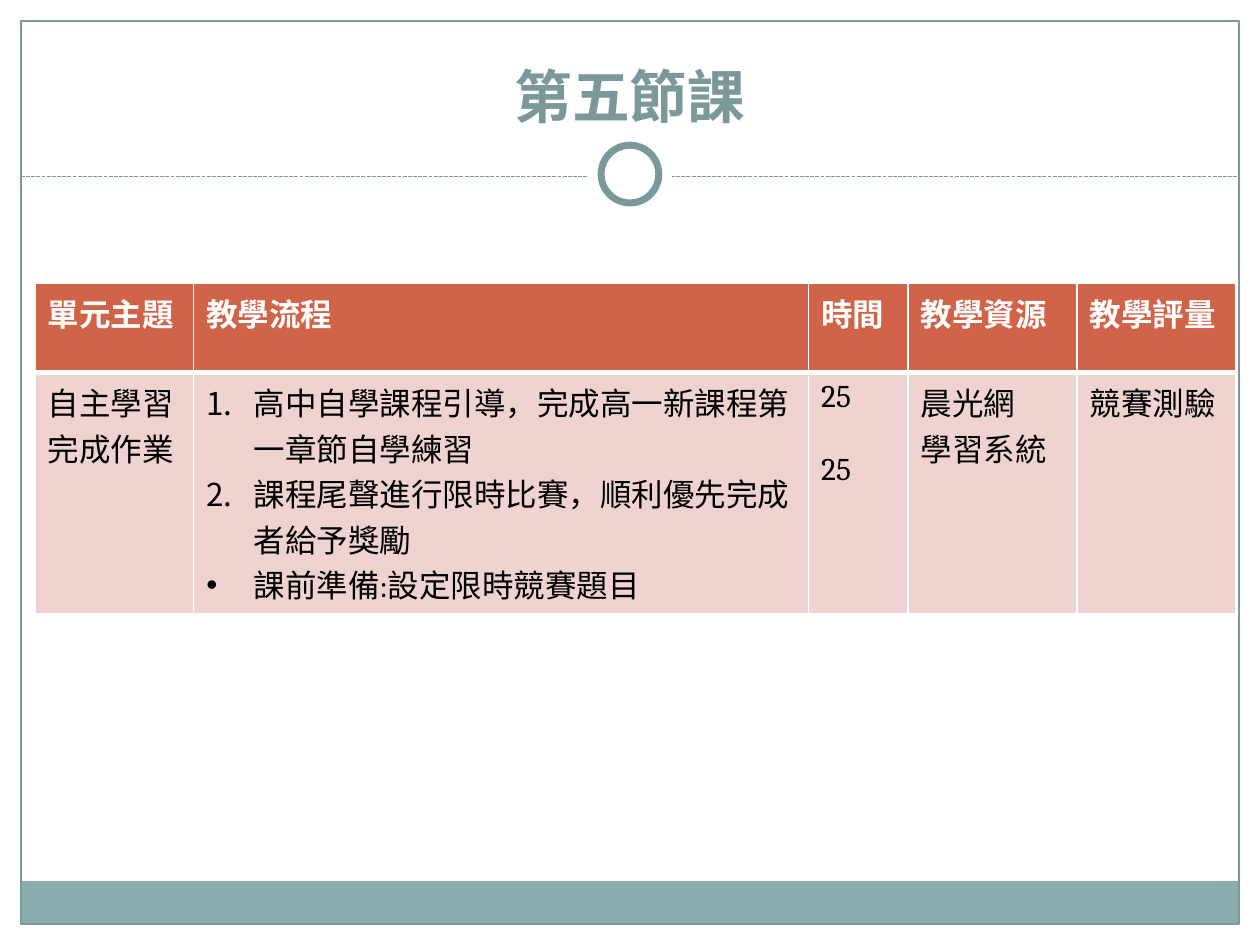
from lxml import etree
from pptx import Presentation
from pptx.dml.color import RGBColor
from pptx.enum.dml import MSO_LINE
from pptx.enum.shapes import MSO_CONNECTOR, MSO_SHAPE
from pptx.enum.text import MSO_ANCHOR, MSO_AUTO_SIZE, PP_ALIGN
from pptx.oxml.ns import qn
from pptx.util import Pt

RECTANGLE, OVAL = MSO_SHAPE.RECTANGLE, MSO_SHAPE.OVAL
STRAIGHT = MSO_CONNECTOR.STRAIGHT
SHORT_DASH = MSO_LINE.SQUARE_DOT
CENTER, BOTTOM = PP_ALIGN.CENTER, MSO_ANCHOR.BOTTOM
NO_AUTOFIT = MSO_AUTO_SIZE.NONE

FONT = "Cambria"
TEAL, LIGHT_TEAL = "7C999A", "8CADAE"
RUST, PINK = "D16349", "EED3D0"
WHITE, BLACK = "FFFFFF", "000000"

SLIDE_WIDTH, SLIDE_HEIGHT = 720, 540
MARGIN = 12
RULE_Y = 100.8
RING_Y = 99.5
INDENT = 27

COLUMN_WIDTHS = (90.7, 351.4, 56.9, 96.5, 90.7)
ROW_HEIGHTS = (51, 133)
HEADINGS = ("單元主題", "教學流程", "時間", "教學資源", "教學評量")
LESSON = (
    ("自主學習", "完成作業"),
    (
        "高中自學課程引導，完成高一新課程第一章節自學練習",
        "課程尾聲進行限時比賽，順利優先完成者給予獎勵",
        "課前準備:設定限時競賽題目",
    ),
    ("25", "25"),
    ("晨光網", "學習系統"),
    ("競賽測驗",),
)
FLOW_COLUMN, TIME_COLUMN = 1, 2


def color(value):
    return RGBColor.from_string(value)


def style_font(paragraph, size, value, bold):
    font = paragraph.font
    font.name, font.size, font.bold = FONT, Pt(size), bold
    font.color.rgb = color(value)


def add_panel(slide, kind, left, top, width, height, fill=None, line=None, weight=0.75):
    panel = slide.shapes.add_shape(kind, Pt(left), Pt(top), Pt(width), Pt(height))
    panel.shadow.inherit = False
    if fill:
        panel.fill.solid()
        panel.fill.fore_color.rgb = color(fill)
    else:
        panel.fill.background()
    if line:
        panel.line.color.rgb = color(line)
        panel.line.width = Pt(weight)
    else:
        panel.line.fill.background()


def add_disc(slide, diameter, **style):
    """Centre a white disc on the dashed rule."""
    left, top = (SLIDE_WIDTH - diameter) / 2, RING_Y - diameter / 2
    add_panel(slide, OVAL, left, top, diameter, diameter, fill=WHITE, **style)


def add_rule(slide):
    rule = slide.shapes.add_connector(
        STRAIGHT, Pt(MARGIN), Pt(RULE_Y), Pt(SLIDE_WIDTH - MARGIN), Pt(RULE_Y))
    rule.line.color.rgb = color(TEAL)
    rule.line.width = Pt(0.75)
    rule.line.dash_style = SHORT_DASH
    etree.SubElement(rule._element.spPr, qn("a:effectLst"))


def add_frame(slide):
    inner_width = SLIDE_WIDTH - 2 * MARGIN
    add_panel(slide, RECTANGLE, MARGIN, 503.5, inner_width, 24.5, fill=LIGHT_TEAL)
    add_panel(slide, RECTANGLE, MARGIN, MARGIN, inner_width,
              SLIDE_HEIGHT - 2 * MARGIN, line=TEAL)
    add_rule(slide)
    add_disc(slide, 48)
    add_disc(slide, 33, line=TEAL, weight=4)


def set_title(slide, text):
    title = slide.shapes.title
    title.left, title.top, title.width, title.height = Pt(24), Pt(18), Pt(672), Pt(60)
    frame = title.text_frame
    frame.text = text
    frame.auto_size = NO_AUTOFIT
    frame.vertical_anchor = BOTTOM
    paragraph = frame.paragraphs[0]
    paragraph.alignment = CENTER
    style_font(paragraph, 33, TEAL, True)


def set_borders(cell, top, bottom):
    properties = cell._tc.get_or_add_tcPr()
    weights = {"a:lnL": 1, "a:lnR": 1, "a:lnT": top, "a:lnB": bottom}
    for position, (tag, weight) in enumerate(weights.items()):
        border = etree.Element(qn(tag), w=str(Pt(weight)))
        fill = etree.SubElement(border, qn("a:solidFill"))
        etree.SubElement(fill, qn("a:srgbClr"), val=WHITE)
        properties.insert(position, border)


def set_bullet(paragraph, tag, **attributes):
    properties = paragraph._p.get_or_add_pPr()
    properties.set("marL", str(Pt(INDENT)))
    properties.set("indent", str(-Pt(INDENT)))
    if tag == "a:buChar":
        etree.SubElement(properties, qn("a:buFont"), typeface="Arial")
    bullet = etree.SubElement(properties, qn(tag))
    for name, value in attributes.items():
        bullet.set(name, value)


def fill_cell(cell, lines, fill, text_color, bold, top, bottom):
    cell.text = "\n".join(lines)
    for paragraph in cell.text_frame.paragraphs:
        style_font(paragraph, 18, text_color, bold)
    cell.fill.solid()
    cell.fill.fore_color.rgb = color(fill)
    set_borders(cell, top, bottom)


def add_lesson_table(slide):
    table = slide.shapes.add_table(
        len(ROW_HEIGHTS), len(COLUMN_WIDTHS), Pt(20), Pt(162),
        Pt(sum(COLUMN_WIDTHS)), Pt(sum(ROW_HEIGHTS))).table
    for row, height in zip(table.rows, ROW_HEIGHTS):
        row.height = Pt(height)
    for index, width in enumerate(COLUMN_WIDTHS):
        table.columns[index].width = Pt(width)
        fill_cell(table.cell(0, index), [HEADINGS[index]], RUST, WHITE, True, 1, 3)
        fill_cell(table.cell(1, index), LESSON[index], PINK, BLACK, False, 3, 1)

    *steps, preparation = table.cell(1, FLOW_COLUMN).text_frame.paragraphs
    for step in steps:
        set_bullet(step, "a:buAutoNum", type="arabicPeriod")
    set_bullet(preparation, "a:buChar", char="•")
    table.cell(1, TIME_COLUMN).text_frame.paragraphs[1].space_before = Pt(21)


def main():
    presentation = Presentation()
    presentation.slide_width = Pt(SLIDE_WIDTH)
    presentation.slide_height = Pt(SLIDE_HEIGHT)
    slide = presentation.slides.add_slide(presentation.slide_layouts[5])
    add_frame(slide)
    set_title(slide, "第五節課")
    add_lesson_table(slide)
    presentation.save("out.pptx")


if __name__ == "__main__":
    main()
